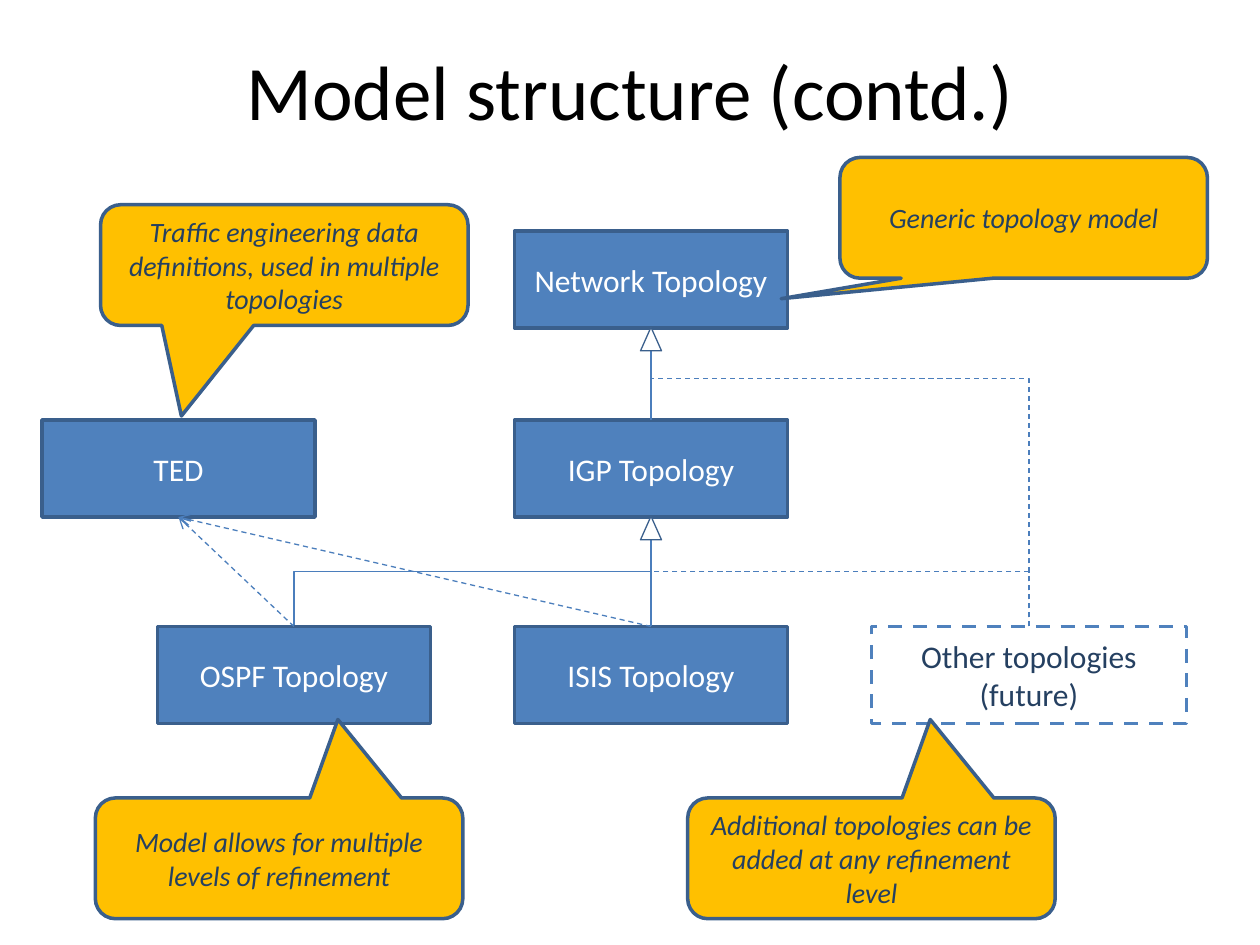
from lxml import etree
from pptx import Presentation
from pptx.dml.color import RGBColor
from pptx.enum import dml, shapes, text
from pptx.oxml.ns import qn
from pptx.util import Pt

BLUE, EDGE, WIRE, NAVY, GOLD = "4F81BD", "3A5F8C", "4B7EBC", "254061", "FFC000"
DASH = dml.MSO_LINE.DASH
KIND = shapes.MSO_SHAPE
LINK = shapes.MSO_CONNECTOR


def rgb(code):
    return RGBColor.from_string(code)


def style(shape, fill, edge, width, words="", size=18, color="FFFFFF", slant=False):
    shape.shadow.inherit = False
    if fill:
        shape.fill.solid()
        shape.fill.fore_color.rgb = rgb(fill)
    else:
        shape.fill.background()
    shape.line.color.rgb = rgb(edge)
    shape.line.width = Pt(width)
    frame = shape.text_frame
    frame.word_wrap = True
    frame.vertical_anchor = text.MSO_ANCHOR.MIDDLE
    frame.text = words
    for para in frame.paragraphs:
        para.alignment = text.PP_ALIGN.CENTER
        for run in para.runs:
            font = run.font
            font.name, font.size, font.italic = "Calibri", Pt(size), slant
            font.color.rgb = rgb(color)


deck = Presentation()
deck.slide_width, deck.slide_height = Pt(720), Pt(540)
slide = deck.slides.add_slide(deck.slide_layouts[5])
parts = slide.shapes

# Title
title = parts.title
title.left, title.top, title.width, title.height = Pt(36), Pt(18), Pt(648), Pt(66)
title.text_frame.text = "Model structure (contd.)"
title.text_frame.vertical_anchor = text.MSO_ANCHOR.MIDDLE
para = title.text_frame.paragraphs[0]
para.alignment = text.PP_ALIGN.CENTER
font = para.runs[0].font
font.name, font.size, font.color.rgb = "Calibri", Pt(44), rgb("000000")

# Grid: box height, tops of the three rows, middle of the main column
tall = 55.5
row = [132, 240, 358]
mid = 372
wires = []

# Elbow lines rise from a bottom box to a target: start x, target y, bend, dashed
for x, y, bend, dashed in [(588, row[0] + tall, 0.83, True),
                           (588, row[1] + tall, 0.5, True),
                           (168, row[1] + tall, 0.5, False)]:
    wire = parts.add_connector(LINK.ELBOW, 0, 0, 0, 0)
    wide, rise = abs(x - mid), row[2] - y
    wire.left, wire.top = Pt((x + mid - rise) / 2), Pt((row[2] + y - wide) / 2)
    wire.width, wire.height = Pt(rise), Pt(wide)
    frame = wire._element.spPr.find(qn("a:xfrm"))
    frame.set("rot", str((270 if x > mid else 90) * 60000))
    frame.set("flipV", "1")
    if x < mid:
        frame.set("flipH", "1")
    guides = wire._element.spPr.find(qn("a:prstGeom")).find(qn("a:avLst"))
    etree.SubElement(guides, qn("a:gd"), name="adj1", fmla=f"val {round(bend * 100000)}")
    wires.append((wire, dashed, False))

# Boxes
box = {}
for key, words, x, y, wide in [
        ("net", "Network Topology", 294, row[0], 156),
        ("igp", "IGP Topology", 294, row[1], 156),
        ("ospf", "OSPF Topology", 90, row[2], 156),
        ("isis", "ISIS Topology", 294, row[2], 156),
        ("other", "Other topologies\n(future)", 498, row[2], 180),
        ("ted", "TED", 24, row[1], 156)]:
    box[key] = parts.add_shape(KIND.RECTANGLE, Pt(x), Pt(y), Pt(wide), Pt(tall))
    if key == "other":
        style(box[key], None, BLUE, 2, words, color=NAVY)
        box[key].line.dash_style = DASH
    else:
        style(box[key], BLUE, EDGE, 2, words)

# Straight lines run from a box top to a box bottom
for low, high, uses in [("igp", "net", False), ("isis", "igp", False),
                        ("ospf", "ted", True), ("isis", "ted", True)]:
    wire = parts.add_connector(LINK.STRAIGHT, 0, 0, 0, 0)
    wire.begin_connect(box[low], 0)
    wire.end_connect(box[high], 2)
    wires.append((wire, uses, uses))

# Line looks
for wire, dashed, arrow in wires:
    wire.line.color.rgb = rgb(WIRE)
    wire.line.width = Pt(0.75)
    if dashed:
        wire.line.dash_style = DASH
    if arrow:
        etree.SubElement(wire.line._get_or_add_ln(), qn("a:tailEnd"), type="arrow")
    etree.SubElement(wire._element.spPr, qn("a:effectLst"))

# Inheritance heads
for y in row[:2]:
    head = parts.add_shape(KIND.ISOSCELES_TRIANGLE, Pt(mid - 6), Pt(y + tall - 0.5),
                           Pt(12), Pt(13.5))
    style(head, "FFFFFF", EDGE, 0.75)

# Callouts: words, place, tip offset
for words, x, y, tip in [
        ("Generic topology model", 480, 90, (-0.66, 0.67)),
        ("Traffic engineering data definitions, used in multiple topologies",
         57.5, 117, (-0.28, 1.25)),
        ("Model allows for multiple levels of refinement", 54.5, 456, (0.16, -1.15)),
        ("Additional topologies can be added at any refinement level",
         393, 456, (0.16, -1.15))]:
    note = parts.add_shape(KIND.ROUNDED_RECTANGULAR_CALLOUT, Pt(x), Pt(y), Pt(210), Pt(69))
    note.adjustments[0], note.adjustments[1] = tip
    style(note, GOLD, EDGE, 2, words, 16, NAVY, True)

deck.save("out.pptx")
